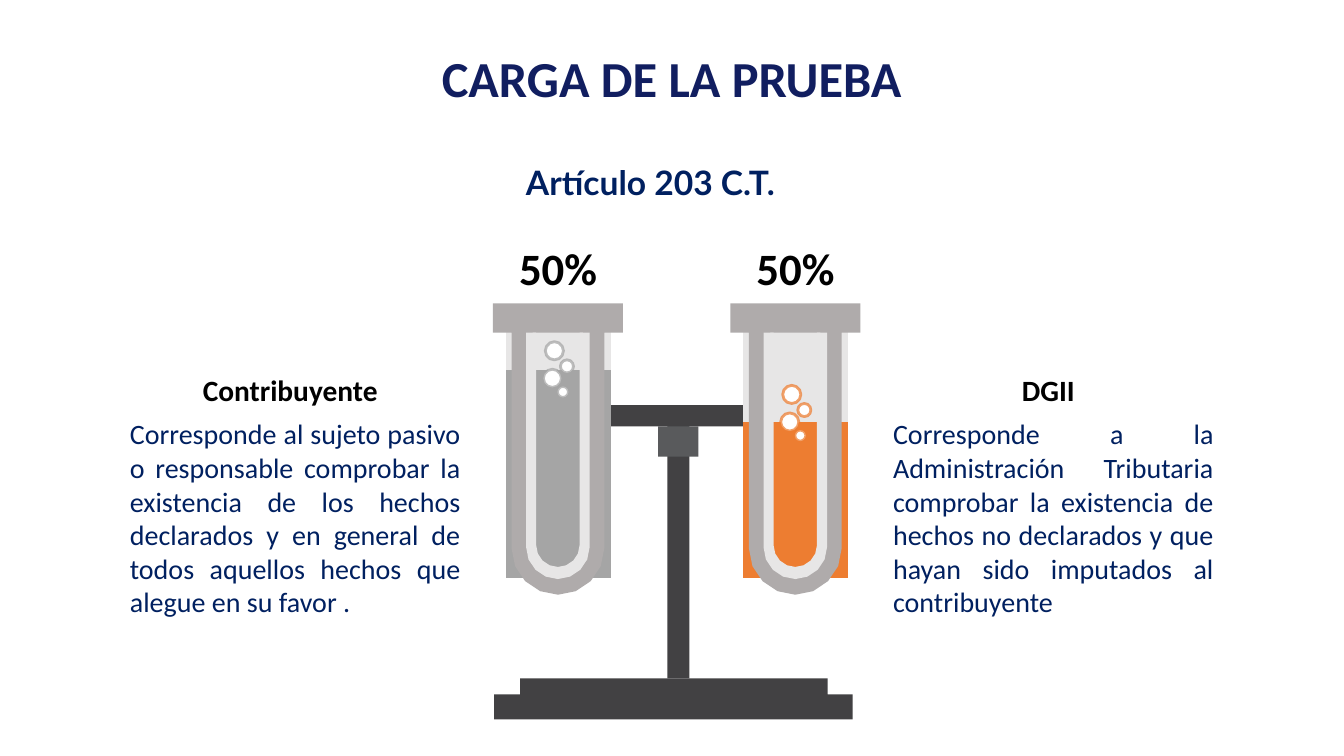
from dataclasses import dataclass
from math import cos, pi, sin

from lxml import etree
from pptx import Presentation
from pptx.chart.data import CategoryChartData
from pptx.dml.color import RGBColor
from pptx.enum.chart import XL_CHART_TYPE
from pptx.enum.shapes import MSO_SHAPE
from pptx.enum.text import MSO_ANCHOR, MSO_AUTO_SIZE, PP_ALIGN
from pptx.oxml.ns import qn
from pptx.util import Emu, Inches, Pt

RECT, OVAL = MSO_SHAPE.RECTANGLE, MSO_SHAPE.OVAL
STACK = XL_CHART_TYPE.COLUMN_STACKED_100
CENTER, JUST = PP_ALIGN.CENTER, PP_ALIGN.JUSTIFY
TOP, MIDDLE = MSO_ANCHOR.TOP, MSO_ANCHOR.MIDDLE
GROW = MSO_AUTO_SIZE.SHAPE_TO_FIT_TEXT

COLS, ROWS = 160, 90
CELL = Inches(1) // 12
COLORS = {
    "title": "111E60", "navy": "002060", "black": "000000", "white": "FFFFFF",
    "stand": "424143", "clamp": "595A5C", "glass": "AFABAB", "pale": "E7E6E6",
    "gray": "A5A5A5", "orange": "ED7D31",
}
CAP, LIP = 36.12, 39.6
STEPS = 8


@dataclass
class Box:
    x: float
    y: float
    w: float
    h: float

    def emu(self) -> list[Emu]:
        return [grid(v) for v in (self.x, self.y, self.w, self.h)]


@dataclass
class Tube:
    mid: float
    level: int
    color: str
    foam: float


@dataclass
class Label:
    text: str
    box: Box
    size: int
    color: str
    bold: bool = True
    align: PP_ALIGN = CENTER
    anchor: MSO_ANCHOR = MIDDLE
    font: str = "Calibri"
    wrap: bool = True
    left: float = 0
    right: float = 0


@dataclass
class Party:
    name: str
    duty: str
    x: float
    w: float


TUBES = [Tube(66.42, 80, "gray", 40.68), Tube(94.68, 60, "orange", 45.88)]
BUBBLES = [Box(-1.5, 0, 2.16, 2.16), Box(0.3, 2.16, 1.56, 1.56),
           Box(-1.74, 3.28, 2.16, 2.16), Box(-0.06, 5.32, 1.32, 1.32)]
PARTIES = [
    Party("DGII", "Corresponde a la Administración Tributaria comprobar la existencia "
          "de hechos no declarados y que hayan sido imputados al contribuyente ", 106.32, 38.16),
    Party("Contribuyente", "Corresponde al sujeto pasivo o responsable comprobar la "
          "existencia de los hechos declarados y en general de todos aquellos hechos que "
          "alegue en su favor . ", 15.46, 39.36),
]


def grid(n: float) -> Emu:
    return Emu(round(n * CELL))


def rgb(name: str) -> RGBColor:
    return RGBColor.from_string(COLORS[name])


def paint(shape, color: str) -> None:
    shape.shadow.inherit = False
    shape.fill.solid()
    shape.fill.fore_color.rgb = rgb(color)
    shape.line.fill.background()


def block(slide, kind: MSO_SHAPE, box: Box, color: str):
    shape = slide.shapes.add_shape(kind, *box.emu())
    paint(shape, color)
    return shape


def outline(slide, loops: list[list[tuple[float, float]]], color: str) -> None:
    paths = [[(grid(x), grid(y)) for x, y in loop] for loop in loops]
    pen = slide.shapes.build_freeform(*paths[0][0], scale=1.0)
    pen.add_line_segments(paths[0][1:], close=True)
    for path in paths[1:]:
        pen.move_to(*path[0])
        pen.add_line_segments(path[1:], close=True)
    paint(pen.convert_to_shape(), color)


def bowl(mid: float, y: float, r: float) -> list[tuple[float, float]]:
    arc = [(mid + r * cos(pi * i / STEPS), y + r * sin(pi * i / STEPS))
           for i in range(STEPS + 1)]
    return [(mid + r, LIP), *arc, (mid - r, LIP)]


def write(frame, item: Label) -> None:
    frame.vertical_anchor = item.anchor
    para = frame.paragraphs[0]
    para.alignment = item.align
    run = para.add_run()
    run.text = item.text
    font = run.font
    font.name, font.size, font.bold = item.font, Pt(item.size), item.bold
    font.color.rgb = rgb(item.color)


def label(slide, item: Label) -> None:
    frame = slide.shapes.add_textbox(*item.box.emu()).text_frame
    frame.word_wrap = item.wrap
    frame.auto_size = GROW
    frame.margin_left, frame.margin_right = Inches(item.left), Inches(item.right)
    write(frame, item)


def gauge(slide, tube: Tube) -> None:
    data = CategoryChartData()
    data.categories = ["1"]
    data.add_series("Series 1", [tube.level])
    data.add_series("Series 2", [100 - tube.level])
    box = Box(tube.mid - 6.44, 37.28, 12.96, 32.16)
    chart = slide.shapes.add_chart(STACK, *box.emu(), data).chart
    chart.has_legend = chart.has_title = False
    chart.font.name, chart.font.size = "Calibri", Pt(10)
    chart.font.color.rgb = rgb("black")
    for axis in (chart.category_axis, chart.value_axis):
        axis.has_major_gridlines = False
        axis.visible = False
    plot = chart.plots[0]
    plot.gap_width, plot.overlap, plot.vary_by_categories = 0, 100, False
    for part, color in zip(plot.series, (tube.color, "pale")):
        part.format.fill.solid()
        part.format.fill.fore_color.rgb = rgb(color)


def flask(slide, tube: Tube) -> None:
    mid = tube.mid
    gauge(slide, tube)
    rim = [(mid + 7.74, LIP), (mid + 7.74, CAP), (mid - 7.74, CAP), (mid - 7.74, LIP)]
    outline(slide, [rim + bowl(mid, 65.28, 5.52)[::-1], bowl(mid, 64.92, 3)], "glass")
    outline(slide, [bowl(mid, 65.16, 3.78) + bowl(mid, 64.92, 2.58)[::-1]], "pale")


def foam(slide, tube: Tube) -> None:
    for b in BUBBLES:
        box = Box(tube.mid + b.x, tube.foam + b.y, b.w, b.h)
        ball = block(slide, OVAL, box, "white")
        ball.line.color.rgb = rgb(tube.color)
        ball.line.width = Pt(2)
        tint = ball._element.spPr.find(qn("a:ln")).find(".//" + qn("a:srgbClr"))
        etree.SubElement(tint, qn("a:alpha")).set("val", "73000")


def stand(slide) -> None:
    block(slide, RECT, Box(72.12, 48.24, 17.52, 2.52), "stand")
    outline(slide, [[(98.52, 82.68), (98.52, 80.76), (61.92, 80.76), (61.92, 82.68),
                     (58.84, 82.68), (58.84, 85.64), (101.5, 85.64), (101.5, 82.68)]], "stand")
    block(slide, RECT, Box(79.44, 49.8, 2.64, 30.96), "stand")
    block(slide, RECT, Box(78.36, 50.76, 4.8, 3.6), "clamp")


def main() -> None:
    deck = Presentation()
    deck.slide_width, deck.slide_height = grid(COLS), grid(ROWS)
    slide = deck.slides.add_slide(deck.slide_layouts[5])
    head = Label("CARGA DE LA PRUEBA", Box(32.16, 4.37, 95.64, 10.56), 36, "title")
    title = slide.shapes.title
    title.left, title.top, title.width, title.height = head.box.emu()
    write(title.text_frame, head)
    title.text_frame.paragraphs[0].line_spacing = 0.9
    stand(slide)
    for tube in TUBES:
        flask(slide, tube)
    for tube in TUBES:
        foam(slide, tube)
    for tube in TUBES:
        label(slide, Label("50%", Box(tube.mid - 5.92, 27.96, 11.88, 7.68), 32, "black",
                           wrap=False, left=0.1, right=0.1))
    for side in PARTIES:
        label(slide, Label(side.name, Box(side.x, 43.68, side.w, 5.4), 21, "black", right=0.1))
        label(slide, Label(side.duty, Box(side.x, 49.03, side.w, 25.44), 20, "navy",
                           bold=False, align=JUST, anchor=TOP))
    label(slide, Label("Artículo 203 C.T.", Box(61.44, 18.72, 36, 6), 24, "navy", align=JUST,
                       anchor=TOP, font="Lato", wrap=False, left=0.1, right=0.1))
    deck.save("out.pptx")


if __name__ == "__main__":
    main()
